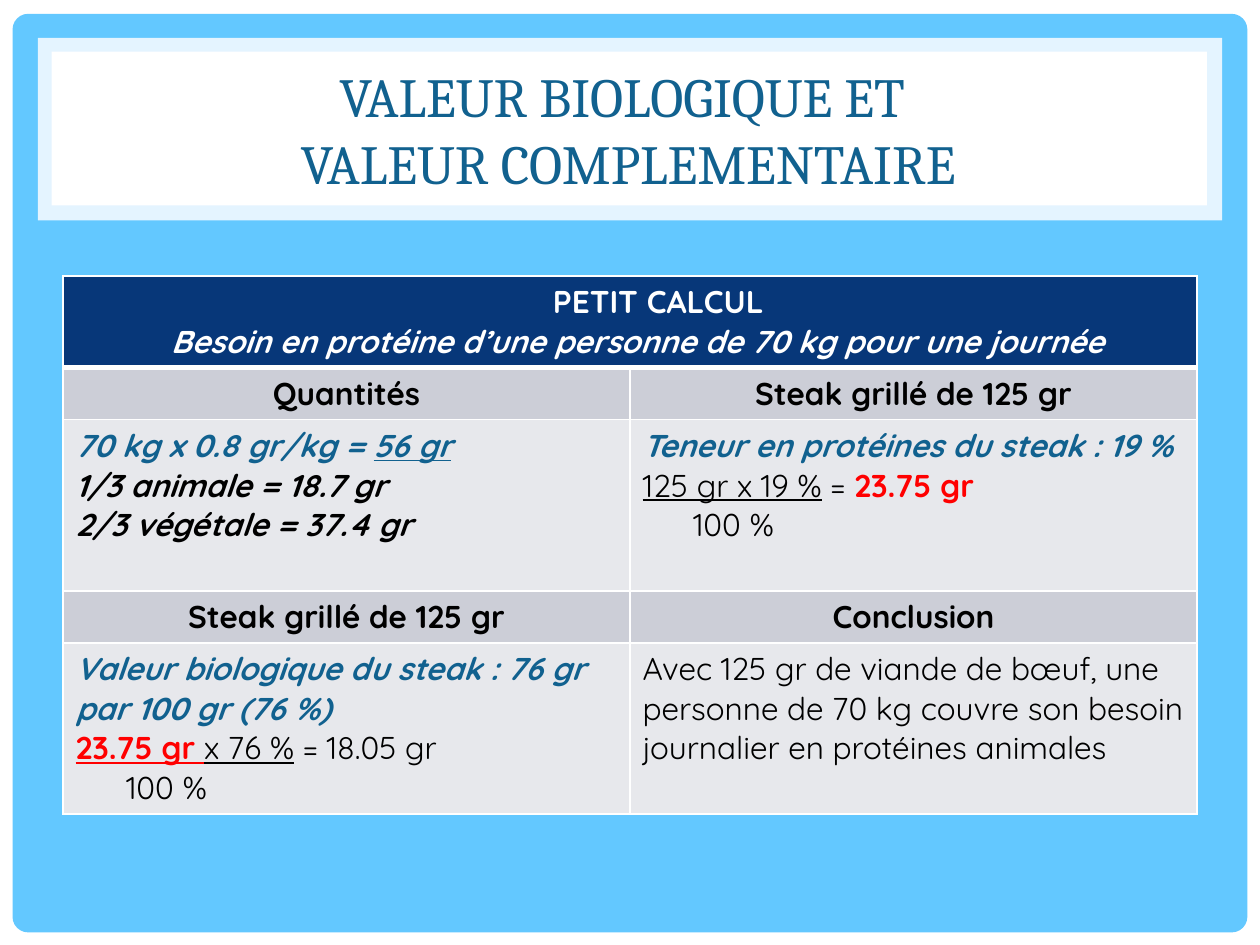
from lxml.etree import SubElement
from pptx import Presentation
from pptx.dml.color import RGBColor
from pptx.enum.shapes import MSO_SHAPE
from pptx.enum.text import MSO_ANCHOR, MSO_AUTO_SIZE, PP_ALIGN
from pptx.oxml.ns import qn
from pptx.util import Inches, Pt

COLORS = {
    "white": "FFFFFF", "sky": "63C8FF", "frame": "E4F4FF", "navy": "073779",
    "blue": "11618F", "black": "000000", "red": "FF0000",
    "label": "CCCED7", "body": "E7E8EC",
}
ROW_HEIGHTS = [0.72, 0.41, 1.36, 0.41, 1.35]


def rgb(name):
    return RGBColor.from_string(COLORS[name])


def add_panel(s, shape, box, color):
    sp = s.shapes.add_shape(shape, *[Inches(v) for v in box])
    sp.shadow.inherit = False
    sp.fill.solid()
    sp.fill.fore_color.rgb = rgb(color)
    sp.line.fill.background()
    return sp


def add_run(p, text, color="black", size=18, font="Quicksand", b=False, i=False, u=False):
    r = p.add_run()
    r.text = text
    f = r.font
    f.name, f.size, f.bold, f.italic, f.underline = font, Pt(size), b, i, u
    f.color.rgb = rgb(color)


def set_title(s, lines):
    sp = s.shapes.title
    sp.left, sp.top, sp.width, sp.height = [Inches(v) for v in (0.47, 0.45, 9.03, 1.14)]
    tf = sp.text_frame
    tf.word_wrap = True
    tf.auto_size = MSO_AUTO_SIZE.NONE
    tf.vertical_anchor = MSO_ANCHOR.MIDDLE
    p = tf.paragraphs[0]
    p.alignment = PP_ALIGN.CENTER
    p.line_spacing = Pt(38)
    for n, line in enumerate(lines):
        if n:
            p.add_line_break()
        add_run(p, line, "blue", 31.5, "Cambria")
    sp.element.getparent().append(sp.element)


def set_borders(cell, bottom=1):
    tcPr = cell._tc.get_or_add_tcPr()
    for n, (side, width) in enumerate((("L", 1), ("R", 1), ("T", 1), ("B", bottom))):
        ln = tcPr.makeelement(qn(f"a:ln{side}"), {"w": str(Pt(width))})
        fill = SubElement(ln, qn("a:solidFill"))
        SubElement(fill, qn("a:srgbClr"), val=COLORS["white"])
        tcPr.insert(n, ln)


def fill_cell(cell, fill, paragraphs, align=PP_ALIGN.LEFT, bottom=1):
    cell.fill.solid()
    cell.fill.fore_color.rgb = rgb(fill)
    set_borders(cell, bottom)
    tf = cell.text_frame
    for n, (indent, runs) in enumerate(paragraphs):
        p = tf.add_paragraph() if n else tf.paragraphs[0]
        p.alignment = align
        if indent:
            p._p.get_or_add_pPr().set("marL", str(Inches(indent)))
        for text, style in runs:
            add_run(p, text, **style)


def add_calculation_table(s):
    bold = {"b": True}
    strong = {"b": True, "i": True}
    accent = {**strong, "color": "blue"}
    result = {"b": True, "color": "red"}
    under = {"u": True}
    header = [
        (0.45, [("PETIT CALCUL", {**bold, "color": "white"})]),
        (0.12, [("Besoin en protéine d’une personne de 70 kg pour une journée",
                 {**strong, "color": "white"})]),
    ]
    sections = [
        [("Quantités", [
            (0, [("70 kg x 0.8 gr/kg = ", accent), ("56 gr", {**accent, **under})]),
            (0, [("1/3 animale = 18.7 gr", strong)]),
            (0, [("2/3 végétale = 37.4 gr", strong)]),
        ]), ("Steak grillé de 125 gr", [
            (0, [("Teneur en protéines du steak : 19 %", accent)]),
            (0, [("125 gr x 19 %", under), (" = ", {}), ("23.75 gr", result)]),
            (0.4, [("100 %", {})]),
        ])],
        [("Steak grillé de 125 gr", [
            (0, [("Valeur biologique du steak : 76 gr par 100 gr (76 %)", accent)]),
            (0, [("23.75 gr ", {**result, **under}), ("x 76 %", under), (" = 18.05 gr", {})]),
            (0.4, [("100 %", {})]),
        ]), ("Conclusion", [
            (0, [("Avec 125 gr de viande de bœuf, une personne de 70 kg couvre "
                  "son besoin journalier en protéines animales", {})]),
        ])],
    ]
    table = s.shapes.add_table(5, 2, Inches(0.5), Inches(2.19), Inches(9),
                               Inches(sum(ROW_HEIGHTS))).table
    table.first_row = table.horz_banding = False
    for row, height in zip(table.rows, ROW_HEIGHTS):
        row.height = Inches(height)
    table.cell(0, 0).merge(table.cell(0, 1))
    fill_cell(table.cell(0, 0), "navy", header, PP_ALIGN.CENTER, bottom=3)
    for n, section in enumerate(sections):
        for col, (label, body) in enumerate(section):
            row = 1 + 2 * n
            fill_cell(table.cell(row, col), "label", [(0, [(label, bold)])], PP_ALIGN.CENTER)
            fill_cell(table.cell(row + 1, col), "body", body)


def main():
    prs = Presentation()
    prs.slide_width, prs.slide_height = Inches(10), Inches(7.5)
    s = prs.slides.add_slide(prs.slide_layouts[5])
    s.background.fill.solid()
    s.background.fill.fore_color.rgb = rgb("white")
    backdrop = add_panel(s, MSO_SHAPE.ROUNDED_RECTANGLE, (0.1, 0.11, 9.8, 7.29), "sky")
    backdrop.adjustments[0] = 0.017
    add_panel(s, MSO_SHAPE.RECTANGLE, (0.3, 0.3, 9.4, 1.45), "frame")
    add_panel(s, MSO_SHAPE.RECTANGLE, (0.41, 0.41, 9.17, 1.22), "white")
    set_title(s, ["VALEUR BIOLOGIQUE ET ", "VALEUR COMPLEMENTAIRE"])
    add_calculation_table(s)
    prs.save("out.pptx")


if __name__ == "__main__":
    main()
